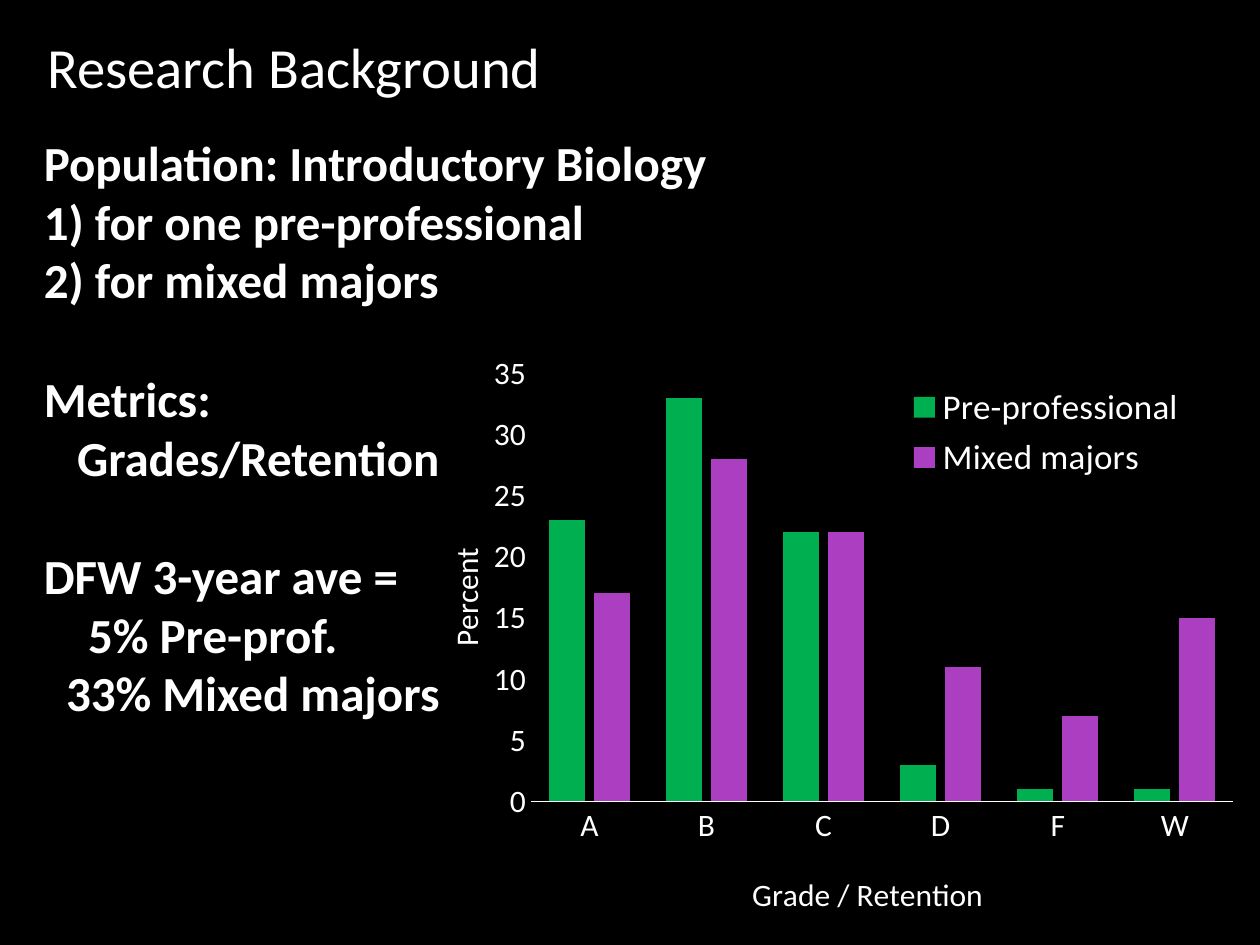
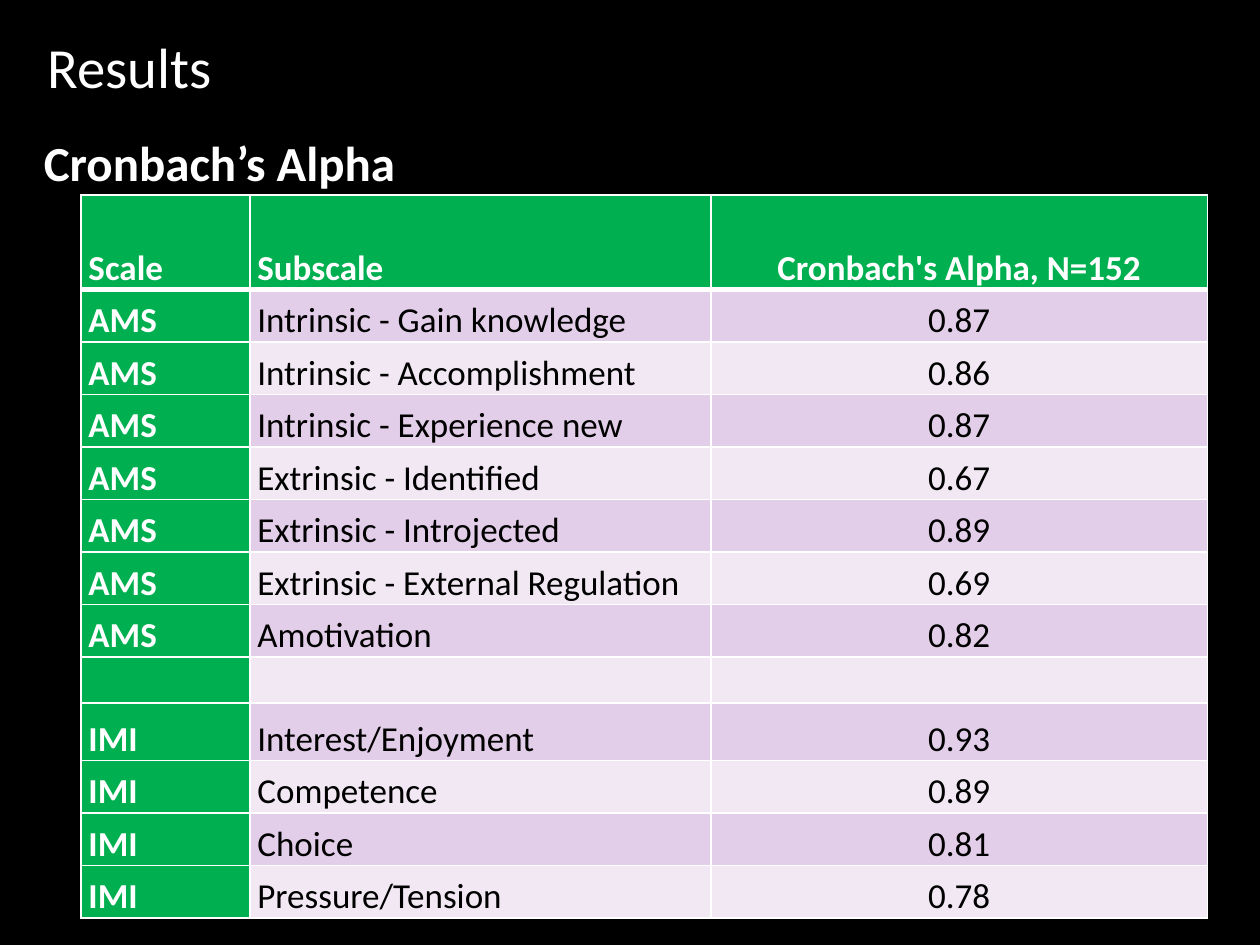
from lxml import etree
from pptx import Presentation
from pptx.chart.data import CategoryChartData
from pptx.dml.color import RGBColor
from pptx.enum.chart import XL_CHART_TYPE, XL_LEGEND_POSITION, XL_TICK_MARK
from pptx.enum.text import MSO_ANCHOR, PP_ALIGN
from pptx.oxml import parse_xml
from pptx.oxml.ns import nsdecls, qn
from pptx.util import Pt

COLUMNS = XL_CHART_TYPE.COLUMN_CLUSTERED
LEGEND_TOP = XL_LEGEND_POSITION.TOP
NO_TICKS = XL_TICK_MARK.NONE
TOP, MIDDLE, BOTTOM = MSO_ANCHOR.TOP, MSO_ANCHOR.MIDDLE, MSO_ANCHOR.BOTTOM
LEFT, CENTER = PP_ALIGN.LEFT, PP_ALIGN.CENTER

# Shared style
FONT = "Calibri"
BLACK, WHITE = "000000", "FFFFFF"
GREEN, PURPLE = "00B050", "AC3EC1"
BANDS = ("E3CEE9", "F1E8F4")
TITLE_SIZE, BODY_SIZE, CELL_SIZE, AXIS_SIZE, LEGEND_SIZE = 32.4, 28, 20, 18, 20
TITLE_AREA = (20, 21.6, 495, 32.4)
BODY_LEFT, BODY_TOP, BODY_WIDTH = 18, 72, 684
GROUP_GAP = 34

# Content: groups of (text, indent)
BACKGROUND_TITLE = "Research Background"
BACKGROUND_GROUPS = [
    [("Population: Introductory Biology", 0), ("1) for one pre-professional", 0),
     ("2) for mixed majors", 0)],
    [("Metrics:", 0), ("Grades/Retention", 19)],
    [("DFW 3-year ave =", 0), ("5% Pre-prof.", 25.3), ("33% Mixed majors", 12.7)],
]
GRADES = ["A", "B", "C", "D", "F", "W"]
GRADE_SERIES = [
    ("Pre-professional", GREEN, (23, 33, 22, 3, 1, 1)),
    ("Mixed majors", PURPLE, (17, 28, 22, 11, 7, 15)),
]
CHART_AREA = (231, 200, 489, 327.6)
# Places inside the chart, as shares of its width and height
PLOT_PLACE = (0.148, 0.041, 0.821, 0.754)
LEGEND_PLACE = (0.58, 0.05, 0.34, 0.19)
GRADE_TITLE_PLACE = (0.4, 0.91)
PERCENT_TITLE_PLACE = (0.04, 0.34)

RESULTS_TITLE = "Results"
RESULTS_GROUPS = [[("Cronbach’s Alpha", 0)]]
ALPHA_HEADER = ("Scale", "Subscale", "Cronbach's Alpha, N=152")
ALPHA_ROWS = [
    ("AMS", "Intrinsic - Gain knowledge", "0.87"),
    ("AMS", "Intrinsic - Accomplishment", "0.86"),
    ("AMS", "Intrinsic - Experience new", "0.87"),
    ("AMS", "Extrinsic - Identified", "0.67"),
    ("AMS", "Extrinsic - Introjected", "0.89"),
    ("AMS", "Extrinsic - External Regulation", "0.69"),
    ("AMS", "Amotivation", "0.82"),
    ("", "", ""),
    ("IMI", "Interest/Enjoyment", "0.93"),
    ("IMI", "Competence", "0.89"),
    ("IMI", "Choice", "0.81"),
    ("IMI", "Pressure/Tension", "0.78"),
]
TABLE_LEFT, TABLE_TOP = 46.3, 111.5
COLUMN_WIDTHS = (96.5, 263.5, 283.7)
ROW_HEIGHT = 30
SPECIAL_HEIGHTS = {0: 54, 8: 26.3, 9: 33}


def color(hex_string):
    return RGBColor.from_string(hex_string)


def points(values):
    return [Pt(value) for value in values]


def style_font(font, size, hex_string=WHITE, bold=False):
    font.name, font.size, font.bold = FONT, Pt(size), bold
    font.color.rgb = color(hex_string)


def add_text(page, area, groups, size, bold=False, anchor=TOP):
    frame = page.shapes.add_textbox(*points(area)).text_frame
    frame.word_wrap = True
    frame.vertical_anchor = anchor
    lines = [(text, indent, GROUP_GAP if number and not position else 0)
             for number, group in enumerate(groups)
             for position, (text, indent) in enumerate(group)]
    for number, (text, indent, gap) in enumerate(lines):
        para = frame.add_paragraph() if number else frame.paragraphs[0]
        para.text = text
        if indent:
            para._p.get_or_add_pPr().set("marL", str(Pt(indent)))
        para.space_before = Pt(gap)
        style_font(para.font, size, bold=bold)


def add_page(deck, title, groups, body_height):
    page = deck.slides.add_slide(deck.slide_layouts[6])
    page.background.fill.solid()
    page.background.fill.fore_color.rgb = color(BLACK)
    add_text(page, TITLE_AREA, [[(title, 0)]], TITLE_SIZE, anchor=MIDDLE)
    add_text(page, (BODY_LEFT, BODY_TOP, BODY_WIDTH, body_height), groups, BODY_SIZE, bold=True)
    return page


# Chart
def place(element, numbers, after, inner=False):
    """Give a chart part a fixed place, right behind its child named after."""
    for old in element.findall(qn("c:layout")):
        element.remove(old)
    target = '<c:layoutTarget val="inner"/>' if inner else ""
    modes = '<c:xMode val="edge"/><c:yMode val="edge"/>'
    sizes = "".join(f'<c:{key} val="{number}"/>' for key, number in zip("xywh", numbers))
    layout = parse_xml(f'<c:layout {nsdecls("c")}><c:manualLayout>{target}{modes}{sizes}'
                       "</c:manualLayout></c:layout>")
    if after:
        element.find(qn(after)).addnext(layout)
    else:
        element.insert(0, layout)


def style_axis(axis, title, title_place):
    axis.has_major_gridlines = False
    axis.major_tick_mark = axis.minor_tick_mark = NO_TICKS
    style_font(axis.tick_labels.font, AXIS_SIZE)
    frame = axis.axis_title.text_frame
    frame.text = title
    style_font(frame.paragraphs[0].font, AXIS_SIZE)
    place(axis.axis_title._element, title_place, "c:tx")
    return frame


def add_grade_chart(page):
    data = CategoryChartData(number_format="0")
    data.categories = GRADES
    for name, _, values in GRADE_SERIES:
        data.add_series(name, values)
    chart = page.shapes.add_chart(COLUMNS, *points(CHART_AREA), data).chart
    chart.has_title = False
    style_font(chart.font, AXIS_SIZE)
    place(chart._chartSpace.chart.plotArea, PLOT_PLACE, None, inner=True)

    plot = chart.plots[0]
    plot.gap_width, plot.overlap = 100, -26
    plot.vary_by_categories = False
    for series, (_, fill, _) in zip(plot.series, GRADE_SERIES):
        series.format.fill.solid()
        series.format.fill.fore_color.rgb = color(fill)

    grades, percent = chart.category_axis, chart.value_axis
    style_axis(grades, "Grade / Retention", GRADE_TITLE_PLACE)
    grades.format.line.color.rgb = color(WHITE)
    grades.format.line.width = Pt(0.75)
    frame = style_axis(percent, "Percent", PERCENT_TITLE_PLACE)
    frame._txBody.bodyPr.set("rot", "-5400000")
    frame._txBody.bodyPr.set("vert", "horz")
    percent.format.line.fill.background()
    percent.minimum_scale, percent.maximum_scale, percent.major_unit = 0, 35, 5
    percent.tick_labels.number_format = "0"
    percent.tick_labels.number_format_is_linked = False

    chart.has_legend = True
    chart.legend.position = LEGEND_TOP
    chart.legend.include_in_layout = True
    style_font(chart.legend.font, LEGEND_SIZE)
    place(chart.legend._element, LEGEND_PLACE, "c:legendPos")


# Table
def set_borders(cell, widths):
    properties = cell._tc.get_or_add_tcPr()
    for side, width in zip("LRTB", widths):
        line = etree.SubElement(properties, qn(f"a:ln{side}"), w=str(Pt(width)))
        fill = etree.SubElement(line, qn("a:solidFill"))
        etree.SubElement(fill, qn("a:srgbClr"), val=WHITE)


def add_alpha_table(page):
    rows = [ALPHA_HEADER, *ALPHA_ROWS]
    heights = [SPECIAL_HEIGHTS.get(number, ROW_HEIGHT) for number in range(len(rows))]
    area = (TABLE_LEFT, TABLE_TOP, sum(COLUMN_WIDTHS), sum(heights))
    table = page.shapes.add_table(len(rows), len(COLUMN_WIDTHS), *points(area)).table
    for column, width in zip(table.columns, COLUMN_WIDTHS):
        column.width = Pt(width)
    for r, (texts, height) in enumerate(zip(rows, heights)):
        table.rows[r].height = Pt(height)
        for c, text in enumerate(texts):
            cell = table.cell(r, c)
            heading = r == 0 or c == 0
            set_borders(cell, (1, 1, 3 if r == 1 else 1, 3 if r == 0 else 1))
            cell.fill.solid()
            cell.fill.fore_color.rgb = color(GREEN if heading else BANDS[(r - 1) % 2])
            cell.margin_left = cell.margin_right = Pt(4.3)
            cell.margin_top = cell.margin_bottom = 0
            cell.vertical_anchor = BOTTOM
            para = cell.text_frame.paragraphs[0]
            para.text = text
            para.alignment = CENTER if c == 2 else LEFT
            para.line_spacing = 1.07
            style_font(para.font, CELL_SIZE, WHITE if heading else BLACK, bold=heading)


def main():
    deck = Presentation()
    deck.slide_width, deck.slide_height = Pt(720), Pt(540)
    add_grade_chart(add_page(deck, BACKGROUND_TITLE, BACKGROUND_GROUPS, 350))
    add_alpha_table(add_page(deck, RESULTS_TITLE, RESULTS_GROUPS, 40))
    deck.save("out.pptx")


if __name__ == "__main__":
    main()
